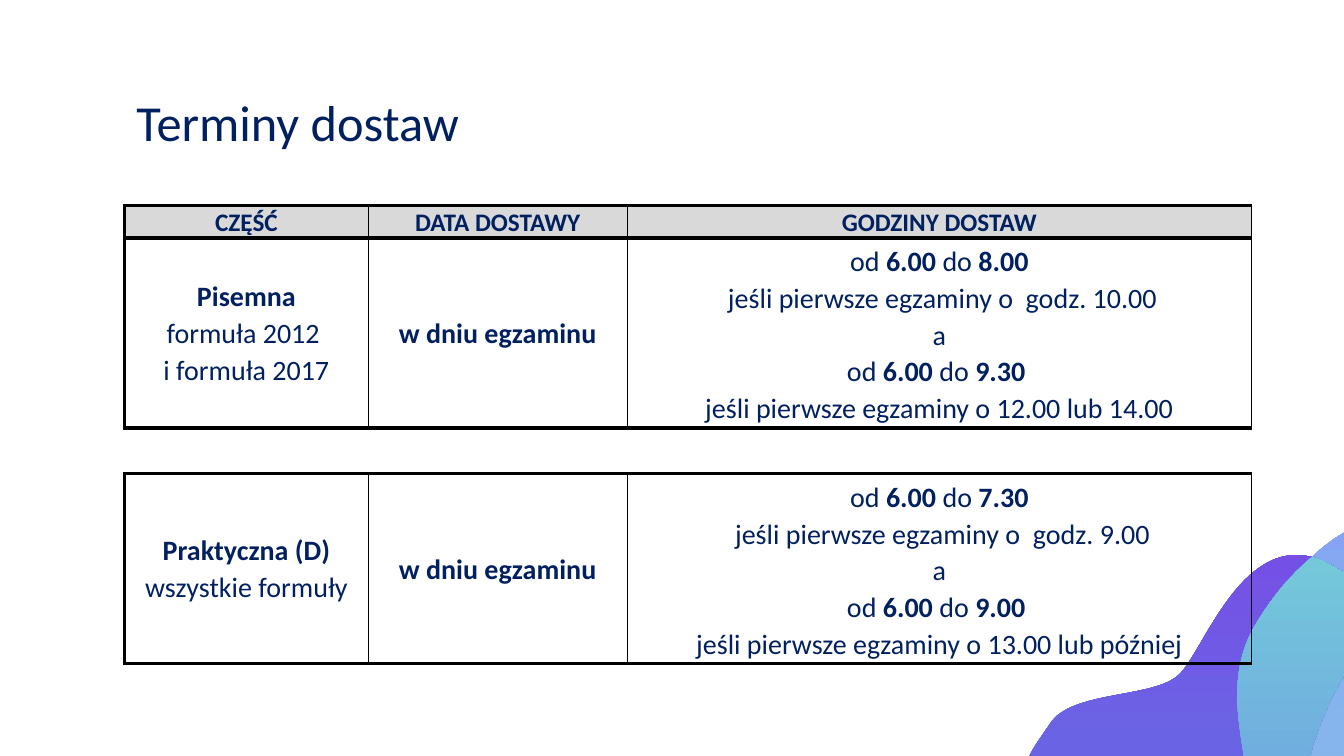
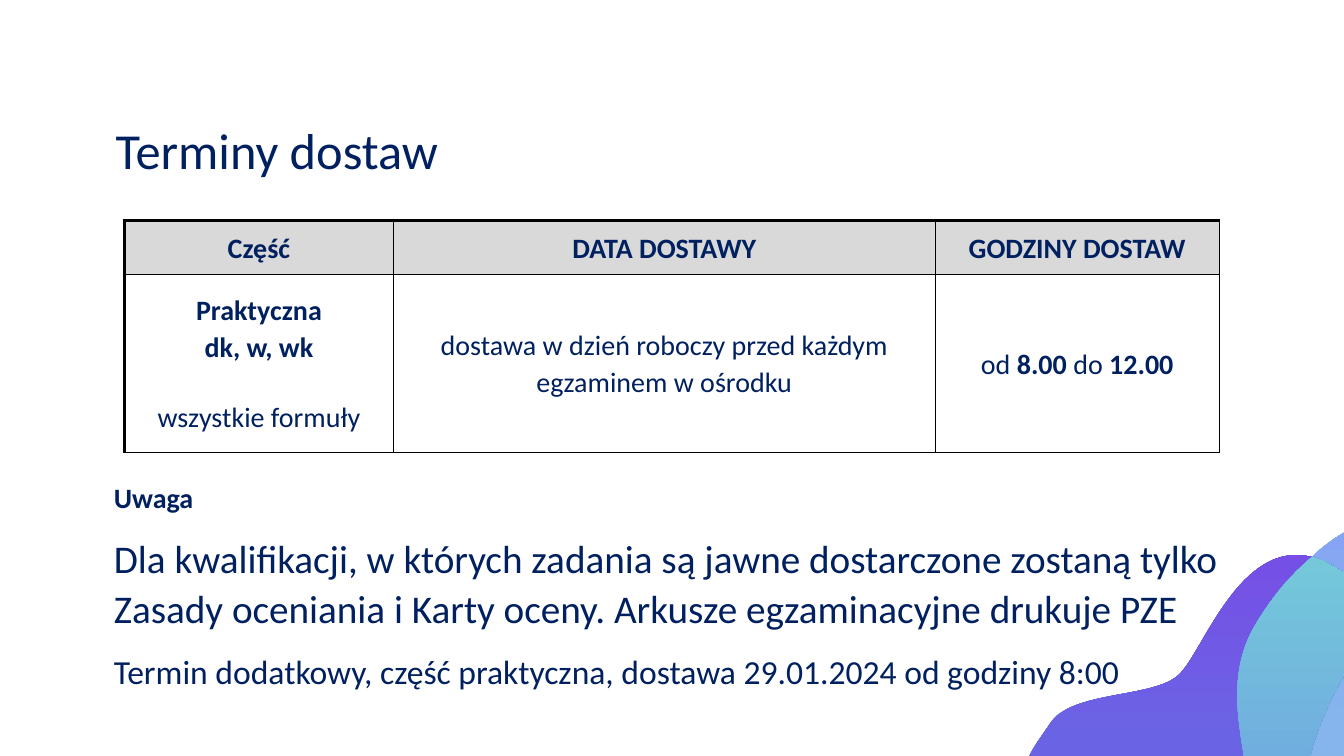
from dataclasses import dataclass
from itertools import pairwise

import pptx
import pptx.dml.color
import pptx.enum.text
import pptx.oxml
import pptx.oxml.ns
import pptx.util
from pptx.slide import Slide
from pptx.table import _Cell
from pptx.text.text import TextFrame

Pt = pptx.util.Pt
RGBColor = pptx.dml.color.RGBColor
Align = pptx.enum.text.PP_ALIGN
qn = pptx.oxml.ns.qn
Point = tuple[int, int]

NAVY = RGBColor(0x00, 0x20, 0x60)
BLACK = RGBColor(0x00, 0x00, 0x00)
HEADER_GREY = RGBColor(0xD9, 0xD9, 0xD9)
AQUA = RGBColor(0x80, 0xDE, 0xDE)
SKY = RGBColor(0x86, 0xB4, 0xEC)
PERIWINKLE = RGBColor(0x86, 0xA2, 0xF4)
INDIGO = RGBColor(0x66, 0x72, 0xE4)
IRIS = RGBColor(0x6A, 0x64, 0xE4)
VIOLET = RGBColor(0x78, 0x4C, 0xE6)
STEEL = RGBColor(0x70, 0xAE, 0xDF)
TEAL = RGBColor(0x74, 0xC8, 0xD9)

FONT = "Calibri"
TITLE = "Terminy dostaw"
LINE_SPACING = 1.07
THICK, THIN = 3, 0.75
TABLE_LEFT = 89
CELL_MARGIN = 3.6


@dataclass(frozen=True)
class Wave:
    """Closed outline of cubic curves: a start, then two handles and an end for each curve."""
    start: Point
    curves: tuple[tuple[Point, Point, Point], ...]
    gradient: tuple[RGBColor, RGBColor, RGBColor]  # bottom, middle, top


@dataclass(frozen=True)
class Paragraph:
    """Text in which asterisks switch bold on and off and newlines break the line."""
    text: str
    size: float = 20
    space_before: float = 0


@dataclass(frozen=True)
class Schedule:
    top: float
    widths: tuple[float, ...]
    heights: tuple[float, ...]
    rules: tuple[float, ...]  # widths of the horizontal lines, from the top
    rows: tuple[tuple[tuple[Paragraph, ...], ...], ...]
    has_header: bool = True


WAVES = (
    Wave((816, 677), (
        ((977, 615), (858, 521), (906, 438)),
        ((956, 355), (1012, 365), (1027, 382)),
        ((1043, 398), (1047, 415), (1023, 444)),
        ((999, 471), (1048, 524), (1081, 561)),
        ((1115, 597), (1127, 679), (1047, 696)),
        ((967, 711), (971, 710), (932, 775)),
        ((894, 839), (847, 837), (847, 837)),
        ((847, 837), (770, 828), (760, 765)),
        ((749, 701), (816, 677), (816, 677)),
    ), (AQUA, SKY, PERIWINKLE)),
    Wave((727, 775), (
        ((727, 775), (755, 837), (872, 797)),
        ((989, 757), (957, 641), (945, 600)),
        ((932, 559), (930, 548), (947, 508)),
        ((963, 468), (1007, 432), (948, 402)),
        ((889, 373), (860, 466), (842, 482)),
        ((824, 499), (765, 493), (750, 517)),
        ((734, 541), (712, 561), (742, 646)),
        ((742, 646), (768, 685), (732, 730)),
        ((732, 730), (711, 757), (727, 775)),
    ), (INDIGO, IRIS, VIOLET)),
    Wave((872, 797), (
        ((819, 815), (784, 812), (762, 804)),
        ((756, 796), (752, 786), (750, 773)),
        ((739, 709), (807, 686), (807, 686)),
        ((968, 624), (847, 529), (897, 446)),
        ((910, 424), (924, 409), (937, 398)),
        ((941, 399), (945, 400), (948, 402)),
        ((1007, 432), (963, 468), (947, 508)),
        ((930, 548), (932, 559), (945, 600)),
        ((957, 641), (989, 757), (872, 797)),
    ), (INDIGO, STEEL, TEAL)),
)


def cell_text(*texts: str, size: float = 20, gap: float = 0) -> tuple[Paragraph, ...]:
    return tuple(Paragraph(text, size, gap if i else 0) for i, text in enumerate(texts))


def header(*labels: str, size: float) -> tuple[tuple[Paragraph, ...], ...]:
    return tuple(cell_text(f"*{label}*", size=size) for label in labels)


EXAM_DAY = cell_text("*w dniu egzaminu*")
EXAM_WIDTHS = (174, 185, 446)

WRITTEN = Schedule(
    146.7, EXAM_WIDTHS, (23, 135), (THICK, THICK, THICK),
    (
        header("CZĘŚĆ", "DATA DOSTAWY", "GODZINY DOSTAW", size=18),
        (
            cell_text("*Pisemna*\nformuła 2012 \ni formuła 2017"),
            EXAM_DAY,
            cell_text(
                "od *6.00* do *8.00*\n jeśli pierwsze egzaminy o  godz. 10.00",
                "a\nod *6.00* do *9.30 *\njeśli pierwsze egzaminy o 12.00 lub 14.00",
            ),
        ),
    ),
)
PRACTICAL_D = Schedule(
    338.2, EXAM_WIDTHS, (135,), (THICK, THICK),
    ((
        cell_text("*Praktyczna (D)*", "wszystkie formuły"),
        EXAM_DAY,
        cell_text(
            "od *6.00 *do *7.30*\n jeśli pierwsze egzaminy o  godz. 9.00",
            "a\nod *6.00 *do *9.00 *\njeśli pierwsze egzaminy o 13.00 lub później",
        ),
    ),),
    has_header=False,
)
PRACTICAL_OTHER = Schedule(
    157.4, (192, 387, 203), (39, 126.5), (THICK, THIN, THIN),
    (
        header("Część", "DATA DOSTAWY", "GODZINY DOSTAW", size=20),
        (
            cell_text("*Praktyczna\ndk, w, wk*", "wszystkie formuły", gap=24),
            cell_text("dostawa w dzień roboczy przed każdym egzaminem w ośrodku"),
            cell_text("od *8.00* do *12.00*"),
        ),
    ),
)
REMARKS = (
    Paragraph("*Uwaga*"),
    Paragraph(
        "Dla kwalifikacji, w których zadania są jawne dostarczone zostaną tylko "
        "Zasady oceniania i Karty oceny. Arkusze egzaminacyjne drukuje PZE", 28, 12),
    Paragraph("Termin dodatkowy, część praktyczna, dostawa 29.01.2024 od godziny 8:00", 24, 12),
)


def write_text(frame: TextFrame, paragraphs: tuple[Paragraph, ...], *,
               align: Align = Align.LEFT, line_spacing: float = LINE_SPACING,
               wrap: bool = True) -> None:
    frame.word_wrap = wrap
    for i, content in enumerate(paragraphs):
        paragraph = frame.add_paragraph() if i else frame.paragraphs[0]
        paragraph.alignment = align
        paragraph.line_spacing = line_spacing
        paragraph.space_before = Pt(content.space_before)
        for part, styled in enumerate(content.text.split("*")):
            for row, line in enumerate(styled.split("\n")):
                if row:
                    paragraph.add_line_break()
                if line:
                    run = paragraph.add_run()
                    run.text = line
                    run.font.name = FONT
                    run.font.size = Pt(content.size)
                    run.font.bold = part % 2 == 1
                    run.font.color.rgb = NAVY


def draw_wave(slide: Slide, wave: Wave) -> None:
    builder = slide.shapes.build_freeform(*wave.start, scale=Pt(1))
    builder.add_line_segments([point for curve in wave.curves for point in curve])
    shape = builder.convert_to_shape()
    # Every three line segments become the handles and end of one cubic curve.
    segments = list(shape.element.iter(qn("a:lnTo")))[:3 * len(wave.curves)]
    for trio in zip(segments[::3], segments[1::3], segments[2::3]):
        curve = pptx.oxml.parse_xml(f'<a:cubicBezTo {pptx.oxml.ns.nsdecls("a")}/>')
        trio[0].addprevious(curve)
        for segment in trio:
            curve.append(segment[0])
            segment.getparent().remove(segment)
    shape.shadow.inherit = False
    shape.line.fill.background()
    shape.fill.gradient()
    shape.fill.gradient_angle = 90
    stops = next(shape.element.iter(qn("a:gsLst")))
    stops.clear()
    for position, color in zip((0, 65, 100), wave.gradient):
        stops.append(pptx.oxml.parse_xml(
            f'<a:gs {pptx.oxml.ns.nsdecls("a")} pos="{position * 1000}">'
            f'<a:srgbClr val="{color}"/></a:gs>'))


def set_borders(cell: _Cell, **widths: float) -> None:
    """Widths are keyed by side, in schema order: L, R, T, B."""
    properties = cell._tc.get_or_add_tcPr()
    for side, width in widths.items():
        properties.append(pptx.oxml.parse_xml(
            f'<a:ln{side} {pptx.oxml.ns.nsdecls("a")} w="{Pt(width)}">'
            f'<a:solidFill><a:srgbClr val="{BLACK}"/></a:solidFill></a:ln{side}>'))


def draw_schedule(slide: Slide, schedule: Schedule) -> None:
    table = slide.shapes.add_table(
        len(schedule.heights), len(schedule.widths), Pt(TABLE_LEFT), Pt(schedule.top),
        Pt(sum(schedule.widths)), Pt(sum(schedule.heights))).table
    table.first_row = table.horz_banding = False
    for column, width in zip(table.columns, schedule.widths):
        column.width = Pt(width)
    for row, height in zip(table.rows, schedule.heights):
        row.height = Pt(height)
    for r, (contents, (above, below)) in enumerate(zip(schedule.rows, pairwise(schedule.rules))):
        is_header = schedule.has_header and r == 0
        for c, content in enumerate(contents):
            cell = table.cell(r, c)
            is_hours = c == len(contents) - 1 and not is_header
            cell.margin_left = cell.margin_right = Pt(CELL_MARGIN)
            cell.margin_top = cell.margin_bottom = Pt(CELL_MARGIN if is_hours else 0)
            cell.vertical_anchor = pptx.enum.text.MSO_ANCHOR.MIDDLE
            set_borders(cell, L=THIN if c else THICK, R=THIN, T=above, B=below)
            if is_header:
                cell.fill.solid()
                cell.fill.fore_color.rgb = HEADER_GREY
            else:
                cell.fill.background()
            write_text(cell.text_frame, content, align=Align.CENTER)


def add_slide(deck: pptx.presentation.Presentation, title_left: float, title_top: float) -> Slide:
    """Add a slide with the shared waves and title."""
    slide = deck.slides.add_slide(deck.slide_layouts[6])
    for wave in WAVES:
        draw_wave(slide, wave)
    title = slide.shapes.add_textbox(Pt(title_left), Pt(title_top), Pt(247), Pt(51))
    write_text(title.text_frame, (Paragraph(TITLE, 36),), align=Align.CENTER,
               line_spacing=1, wrap=False)
    return slide


def main() -> None:
    deck = pptx.Presentation()
    deck.slide_width, deck.slide_height = Pt(960), Pt(540)

    exam_day = add_slide(deck, 89.2, 61.5)
    draw_schedule(exam_day, WRITTEN)
    draw_schedule(exam_day, PRACTICAL_D)

    day_before = add_slide(deck, 74.3, 81.7)
    draw_schedule(day_before, PRACTICAL_OTHER)
    remarks = day_before.shapes.add_textbox(Pt(74.3), Pt(337.9), Pt(811), Pt(165))
    write_text(remarks.text_frame, REMARKS)

    deck.save("out.pptx")


if __name__ == "__main__":
    main()
